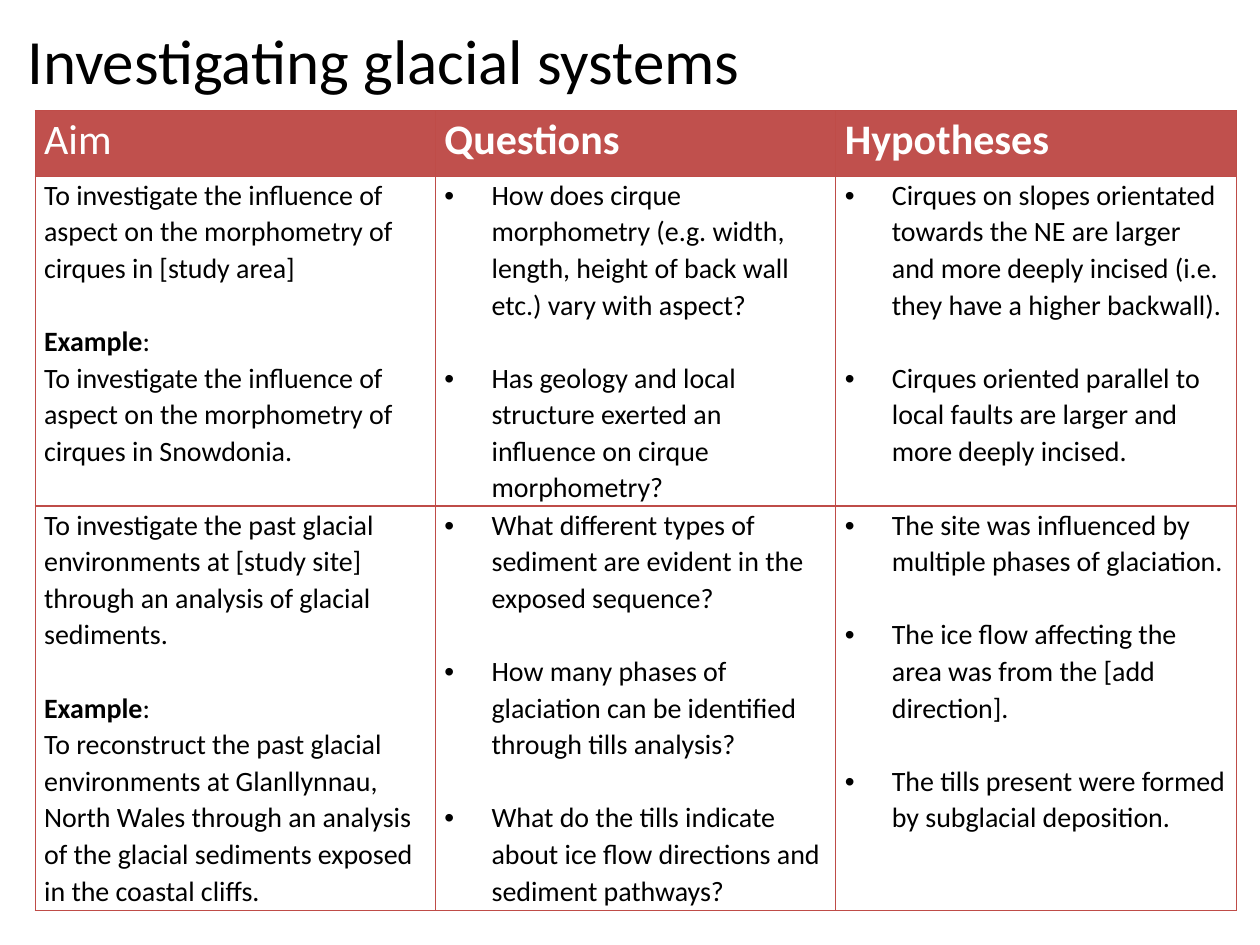
from lxml import etree
from pptx import Presentation
from pptx import util as u
from pptx.dml.color import RGBColor
from pptx.enum import text
from pptx.oxml.ns import qn

FONT, RED, LINE = "Calibri", "C0504D", "BF4C48"
WHITE, BLACK = "FFFFFF", "000000"
SIZE, LEAD = 16, 1.07
GAP = 20.9  # one body line, in points
HANG = u.Cm(0.95)

TITLE = "Investigating glacial systems"
HEADS = ["Aim", "Questions", "Hypotheses"]
ROWS = [
    {
        "aim": "To investigate the influence of aspect on the morphometry of "
               "cirques in [study area]",
        "case": "To investigate the influence of aspect on the morphometry of "
                "cirques in Snowdonia.",
        "lists": [
            ["How does cirque morphometry (e.g. width, length, height of back "
             "wall etc.) vary with aspect?",
             "Has geology and local structure exerted an influence on cirque "
             "morphometry?"],
            ["Cirques on slopes orientated towards the NE are larger and more "
             "deeply incised (i.e. they have a higher backwall).",
             "Cirques oriented parallel to local faults are larger and more "
             "deeply incised."],
        ],
    },
    {
        "aim": "To investigate the past glacial environments at [study site] "
               "through an analysis of glacial sediments.",
        "case": "To reconstruct the past glacial environments at Glanllynnau, "
                "North Wales through an analysis of the glacial sediments "
                "exposed in the coastal cliffs.",
        "lists": [
            ["What different types of sediment are evident in the exposed "
             "sequence?",
             "How many phases of glaciation can be identified through tills "
             "analysis?",
             "What do the tills indicate about ice flow directions and "
             "sediment pathways?"],
            ["The site was influenced by multiple phases of glaciation.",
             "The ice flow affecting the area was from the [add direction].",
             "The tills present were formed by subglacial deposition."],
        ],
    },
]
LEFT, TOP, WIDE = 0.71, 2.23, 24.21
HIGH = [1.32, 6.65, 8.15]


def tint(code):
    return RGBColor.from_string(code)


def write(par, words, size=SIZE, color=BLACK, bold=False):
    run = par.add_run()
    run.text = words
    font = run.font
    font.name, font.size, font.bold = FONT, u.Pt(size), bold
    font.color.rgb = tint(color)


def space(par, after=0):
    par.line_spacing = LEAD
    par.space_after = u.Pt(after)


def bullet(par):
    props = par._p.get_or_add_pPr()
    props.set("marL", str(HANG))
    props.set("indent", str(-HANG))
    etree.SubElement(props, qn("a:buFont"), typeface="Arial")
    etree.SubElement(props, qn("a:buChar"), char="•")


def dress(cell, fill):
    """Set margins, borders and fill of a cell."""
    cell.margin_left = cell.margin_right = u.Cm(0.18)
    cell.margin_top = cell.margin_bottom = 0
    props = cell._tc.get_or_add_tcPr()
    for side in "LRTB":
        edge = etree.SubElement(props, qn("a:ln" + side), w=str(u.Pt(0.75)))
        paint = etree.SubElement(edge, qn("a:solidFill"))
        etree.SubElement(paint, qn("a:srgbClr"), val=LINE)
    cell.fill.solid()
    cell.fill.fore_color.rgb = tint(fill)


def pars(cell, count):
    frame = cell.text_frame
    return [frame.paragraphs[0]] + [frame.add_paragraph() for _ in range(count - 1)]


def fill_aim(cell, row):
    aim, label, case = pars(cell, 3)
    for par, after in ((aim, GAP), (label, 0), (case, 0)):
        space(par, after)
    write(aim, row["aim"])
    write(label, "Example", bold=True)
    write(label, ":")
    write(case, row["case"])


def fill_list(cell, items):
    for num, (par, item) in enumerate(zip(pars(cell, len(items)), items), 1):
        space(par, GAP if num < len(items) else 0)
        bullet(par)
        write(par, item)


def main():
    deck = Presentation()
    deck.slide_width, deck.slide_height = u.Cm(25.4), u.Cm(19.05)
    slide = deck.slides.add_slide(deck.slide_layouts[6])

    box = slide.shapes.add_textbox(u.Cm(0.3), u.Cm(0.43), u.Cm(24.1), u.Cm(1.7))
    frame = box.text_frame
    frame.word_wrap = True
    frame.margin_top = 0
    frame.vertical_anchor = text.MSO_ANCHOR.TOP
    write(frame.paragraphs[0], TITLE, size=36)

    grid = slide.shapes.add_table(len(HIGH), len(HEADS), u.Cm(LEFT), u.Cm(TOP),
                                  u.Cm(WIDE), u.Cm(sum(HIGH))).table
    grid.horz_banding = False
    for col in grid.columns:
        col.width = u.Cm(WIDE / len(HEADS))
    for row, high in zip(grid.rows, HIGH):
        row.height = u.Cm(high)

    for col, head in enumerate(HEADS):
        cell = grid.cell(0, col)
        dress(cell, RED)
        par = cell.text_frame.paragraphs[0]
        space(par)
        write(par, head, size=24, color=WHITE, bold=col > 0)
    for num, row in enumerate(ROWS, 1):
        for col in range(len(HEADS)):
            cell = grid.cell(num, col)
            dress(cell, WHITE)
            if col:
                fill_list(cell, row["lists"][col - 1])
            else:
                fill_aim(cell, row)

    deck.save("out.pptx")


if __name__ == "__main__":
    main()
